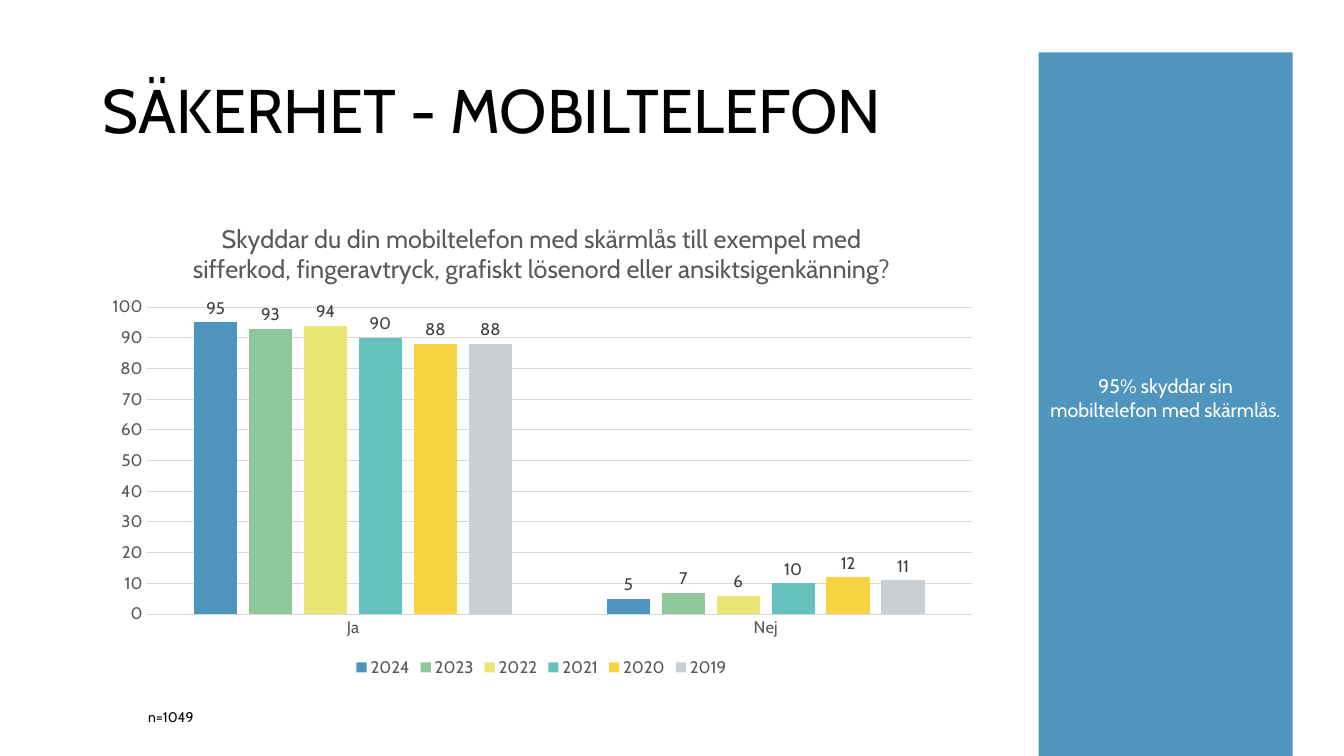
from dataclasses import dataclass

from lxml import etree
from pptx import Presentation
from pptx.chart.data import CategoryChartData
from pptx.dml.color import RGBColor
from pptx.enum.chart import (XL_CHART_TYPE, XL_LABEL_POSITION,
                             XL_LEGEND_POSITION, XL_TICK_MARK)
from pptx.enum.shapes import MSO_SHAPE
from pptx.enum.text import MSO_ANCHOR, PP_ALIGN
from pptx.util import Inches, Pt

COLUMN = XL_CHART_TYPE.COLUMN_CLUSTERED
OUTSIDE = XL_LABEL_POSITION.OUTSIDE_END
BOTTOM = XL_LEGEND_POSITION.BOTTOM
NO_TICK = XL_TICK_MARK.NONE
RECT = MSO_SHAPE.RECTANGLE
MIDDLE, TOP = MSO_ANCHOR.MIDDLE, MSO_ANCHOR.TOP
LEFT, CENTER = PP_ALIGN.LEFT, PP_ALIGN.CENTER


@dataclass(frozen=True)
class Theme:
    font: str = "Cabin"
    black: str = "000000"
    white: str = "FFFFFF"
    gray: str = "595959"
    dark: str = "404040"
    rule: str = "D9D9D9"
    panel: str = "4F95BD"
    head: int = 44
    ask: int = 18
    body: int = 14
    label: int = 12
    note: int = 10


THEME = Theme()

ANSWERS = ("Ja", "Nej")
YEARS = (
    ("2024", (95, 5), "4E94BD"),
    ("2023", (93, 7), "8DC79A"),
    ("2022", (94, 6), "E8E575"),
    ("2021", (90, 10), "65C1BE"),
    ("2020", (88, 12), "F7D243"),
    ("2019", (88, 11), "CACFD3"),
)
QUESTION = ("Skyddar du din mobiltelefon med skärmlås till exempel med "
            "sifferkod, fingeravtryck, grafiskt lösenord eller "
            "ansiktsigenkänning?")


def style(font, size, color):
    font.name = THEME.font
    font.size = Pt(size)
    font.bold = False
    font.color.rgb = RGBColor.from_string(color)


def write(frame, text, size, color, align=LEFT, anchor=TOP):
    frame.word_wrap = True
    frame.vertical_anchor = anchor
    para = frame.paragraphs[0]
    para.alignment = align
    run = para.add_run()
    run.text = text
    style(run.font, size, color)
    return para


def add_text(slide, box, text, size, anchor=TOP):
    frame = slide.shapes.add_textbox(*map(Inches, box)).text_frame
    return write(frame, text, size, THEME.black, anchor=anchor)


def add_panel(slide, box, text):
    panel = slide.shapes.add_shape(RECT, *map(Inches, box))
    panel.shadow.inherit = False
    panel.fill.solid()
    panel.fill.fore_color.rgb = RGBColor.from_string(THEME.panel)
    panel.line.fill.background()
    write(panel.text_frame, text, THEME.body, THEME.white, CENTER, MIDDLE)
    panel.text_frame.margin_bottom = Inches(0.28)


def draw_line(line):
    line.color.rgb = RGBColor.from_string(THEME.rule)
    line.width = Pt(0.75)


def set_axes(chart):
    for axis in (chart.category_axis, chart.value_axis):
        axis.major_tick_mark = axis.minor_tick_mark = NO_TICK
        style(axis.tick_labels.font, THEME.label, THEME.gray)
    draw_line(chart.category_axis.format.line)
    scale = chart.value_axis
    scale.minimum_scale, scale.maximum_scale, scale.major_unit = 0, 100, 10
    scale.format.line.fill.background()
    scale.has_major_gridlines = True
    draw_line(scale.major_gridlines.format.line)


def place_plot(chart, **area):
    """Fix the inner plot area, in fractions of the chart."""
    plot = chart._chartSpace.chart.plotArea
    space = plot.nsmap["c"]
    for old in plot.findall(f"{{{space}}}layout"):
        plot.remove(old)
    layout = etree.Element(f"{{{space}}}layout")
    manual = etree.SubElement(layout, f"{{{space}}}manualLayout")
    rules = {"layoutTarget": "inner", "xMode": "edge", "yMode": "edge", **area}
    for name, value in rules.items():
        etree.SubElement(manual, f"{{{space}}}{name}").set("val", str(value))
    plot.insert(0, layout)


def add_bars(slide, box):
    data = CategoryChartData()
    data.categories = ANSWERS
    for year, values, _ in YEARS:
        data.add_series(year, values)
    chart = slide.shapes.add_chart(COLUMN, *map(Inches, box), data).chart
    style(chart.font, THEME.note, THEME.black)
    chart.has_title = True
    write(chart.chart_title.text_frame, QUESTION, THEME.ask, THEME.gray, CENTER)
    chart.chart_title.include_in_layout = False
    chart.has_legend = True
    chart.legend.position = BOTTOM
    chart.legend.include_in_layout = False
    style(chart.legend.font, THEME.label, THEME.gray)
    set_axes(chart)
    place_plot(chart, x=0.06, y=0.22, w=0.92, h=0.64)

    plot = chart.plots[0]
    plot.gap_width, plot.overlap = 219, -27
    plot.vary_by_categories = False
    for series, (_, _, color) in zip(plot.series, YEARS):
        series.format.fill.solid()
        series.format.fill.fore_color.rgb = RGBColor.from_string(color)
        labels = series.data_labels
        labels.show_value = True
        labels.position = OUTSIDE
        style(labels.font, THEME.label, THEME.dark)


def main():
    deck = Presentation()
    deck.slide_width, deck.slide_height = Inches(13.33), Inches(7.5)
    slide = deck.slides.add_slide(deck.slide_layouts[6])
    title = add_text(slide, (0.92, 0.4, 11.5, 1.45),
                     "SÄKERHET - MOBILTELEFON", THEME.head, MIDDLE)
    title.line_spacing = 0.9
    add_bars(slide, (0.92, 2, 8.9, 4.76))
    add_text(slide, (1.37, 6.98, 9.9, 0.27), "n=1049", THEME.note)
    add_panel(slide, (10.3, 0.52, 2.52, 7.08),
              "95% skyddar sin mobiltelefon med skärmlås.")
    deck.save("out.pptx")


if __name__ == "__main__":
    main()
